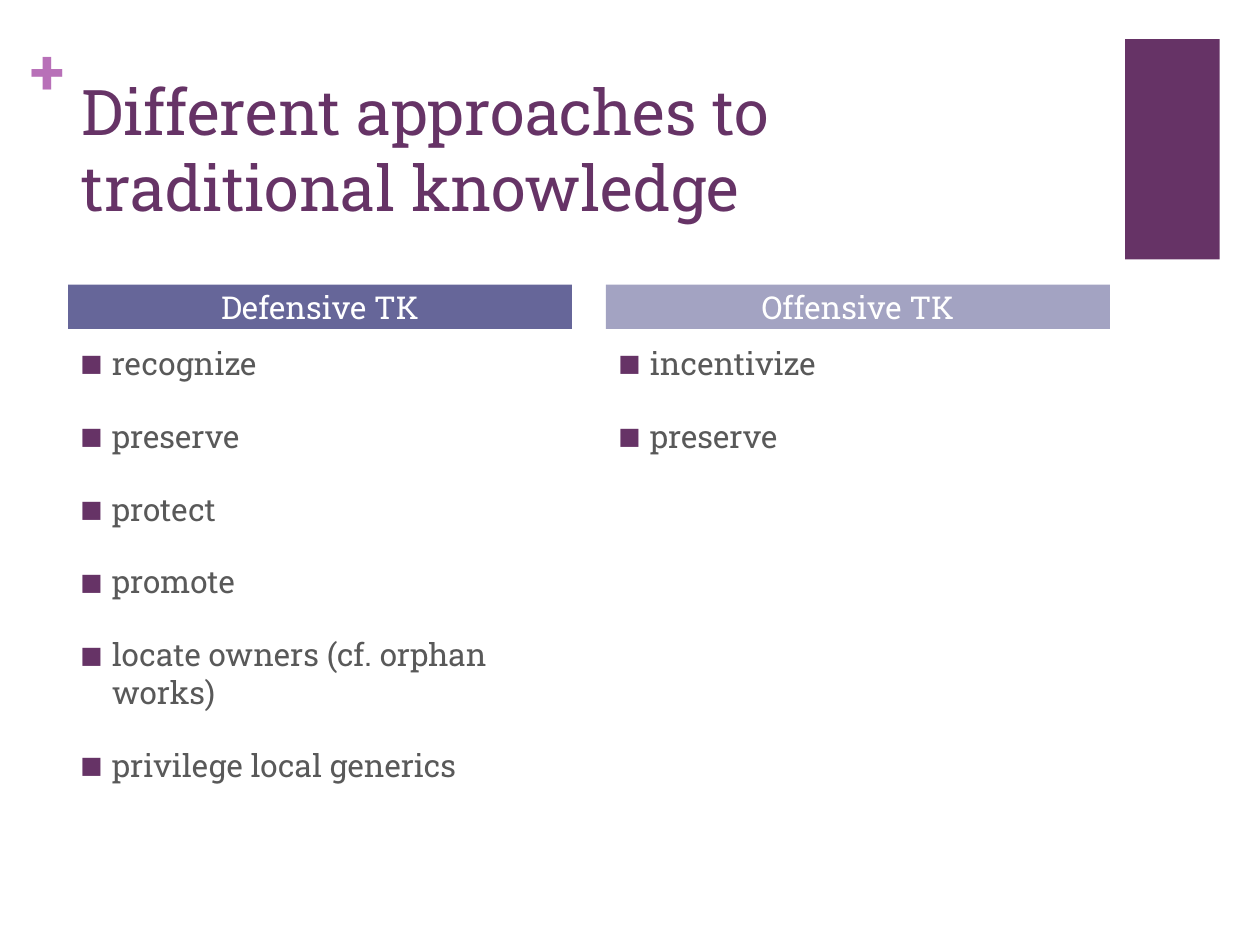
from lxml import etree
from pptx import Presentation
from pptx import util as u
from pptx.dml.color import RGBColor
from pptx.enum import shapes, text
from pptx.oxml.ns import qn

TITLE = "Different approaches to traditional knowledge"
COLUMNS = [
    ("Defensive TK", "header_dark",
     ["recognize", "preserve", "protect", "promote",
      "locate owners (cf. orphan works)", "privilege local generics"]),
    ("Offensive TK", "header_light", ["incentivize", "preserve"]),
]
THEME = {
    "font": "Roboto Slab",
    "colors": {"accent": "663366", "plus": "B870B8", "body": "595959",
               "header_dark": "666699", "header_light": "A3A3C2",
               "white": "FFFFFF"},
    "sizes": {"title": 36, "body": 18},
}
COLUMN_LEFT, COLUMN_WIDTH, COLUMN_STEP = 0.54, 4, 4.27
HEADER_TOP, HEADER_HEIGHT = 2.26, 0.35
LIST_TOP, LIST_HEIGHT = 2.68, 4.02


def color(name):
    return RGBColor.from_string(THEME["colors"][name])


def set_all(target, values):
    for name, value in values.items():
        setattr(target, name, value)


def write(shape, lines, size, ink, frame_format=None, para_format=None, bold=False):
    """Fill a shape with one paragraph per line and return the paragraphs."""
    frame = shape.text_frame
    set_all(frame, {"word_wrap": True, **(frame_format or {})})
    frame.text = "\n".join(lines)
    for para in frame.paragraphs:
        set_all(para, para_format or {})
        set_all(para.font, {"name": THEME["font"], "bold": bold,
                            "size": u.Pt(THEME["sizes"][size])})
        para.font.color.rgb = color(ink)
    return frame.paragraphs


def add_bar(page, at, fill):
    bar = page.shapes.add_shape(shapes.MSO_SHAPE.RECTANGLE, *map(u.Inches, at))
    bar.shadow.inherit = False
    bar.fill.solid()
    bar.fill.fore_color.rgb = color(fill)
    bar.line.fill.background()
    return bar


def add_box(page, at):
    return page.shapes.add_textbox(*map(u.Inches, at))


def add_bullet(para):
    """Give a paragraph a hanging square bullet."""
    props = para._p.get_or_add_pPr()
    props.set("marL", str(u.Inches(0.25)))
    props.set("indent", str(-u.Inches(0.25)))
    bullet_color = etree.SubElement(props, qn("a:buClr"))
    etree.SubElement(bullet_color, qn("a:srgbClr"), val=THEME["colors"]["accent"])
    etree.SubElement(props, qn("a:buSzPct"), val="75000")
    etree.SubElement(props, qn("a:buFont"), typeface=THEME["font"])
    etree.SubElement(props, qn("a:buChar"), char="■")
    # The schema wants the default run properties after the bullet.
    defaults = props.find(qn("a:defRPr"))
    if defaults is not None:
        props.append(defaults)


def add_column(page, index, heading, fill, items):
    left = COLUMN_LEFT + index * COLUMN_STEP
    body = add_box(page, (left, LIST_TOP, COLUMN_WIDTH, LIST_HEIGHT))
    for para in write(body, items, "body", "body",
                      para_format={"space_before": u.Pt(20)}):
        add_bullet(para)
    header = add_bar(page, (left, HEADER_TOP, COLUMN_WIDTH, HEADER_HEIGHT), fill)
    write(header, [heading], "body", "white",
          {"margin_top": 0, "margin_bottom": 0,
           "vertical_anchor": text.MSO_ANCHOR.MIDDLE},
          {"alignment": text.PP_ALIGN.CENTER})


def main():
    deck = Presentation()
    set_all(deck, {"slide_width": u.Inches(10), "slide_height": u.Inches(7.5)})
    page = deck.slides.add_slide(deck.slide_layouts[6])
    add_bar(page, (8.93, 0.31, 0.75, 1.75), "accent")
    no_margins = {f"margin_{side}": 0 for side in ("left", "top", "right", "bottom")}
    write(add_box(page, (0.24, 0.25, 0.28, 0.61)), ["+"], "title", "plus",
          no_margins, bold=True)
    write(add_box(page, (0.55, 0.53, 8.26, 1.22)), [TITLE], "title", "accent",
          {"margin_right": u.Inches(0.2)})
    for index, column in enumerate(COLUMNS):
        add_column(page, index, *column)
    deck.save("out.pptx")


if __name__ == "__main__":
    main()
